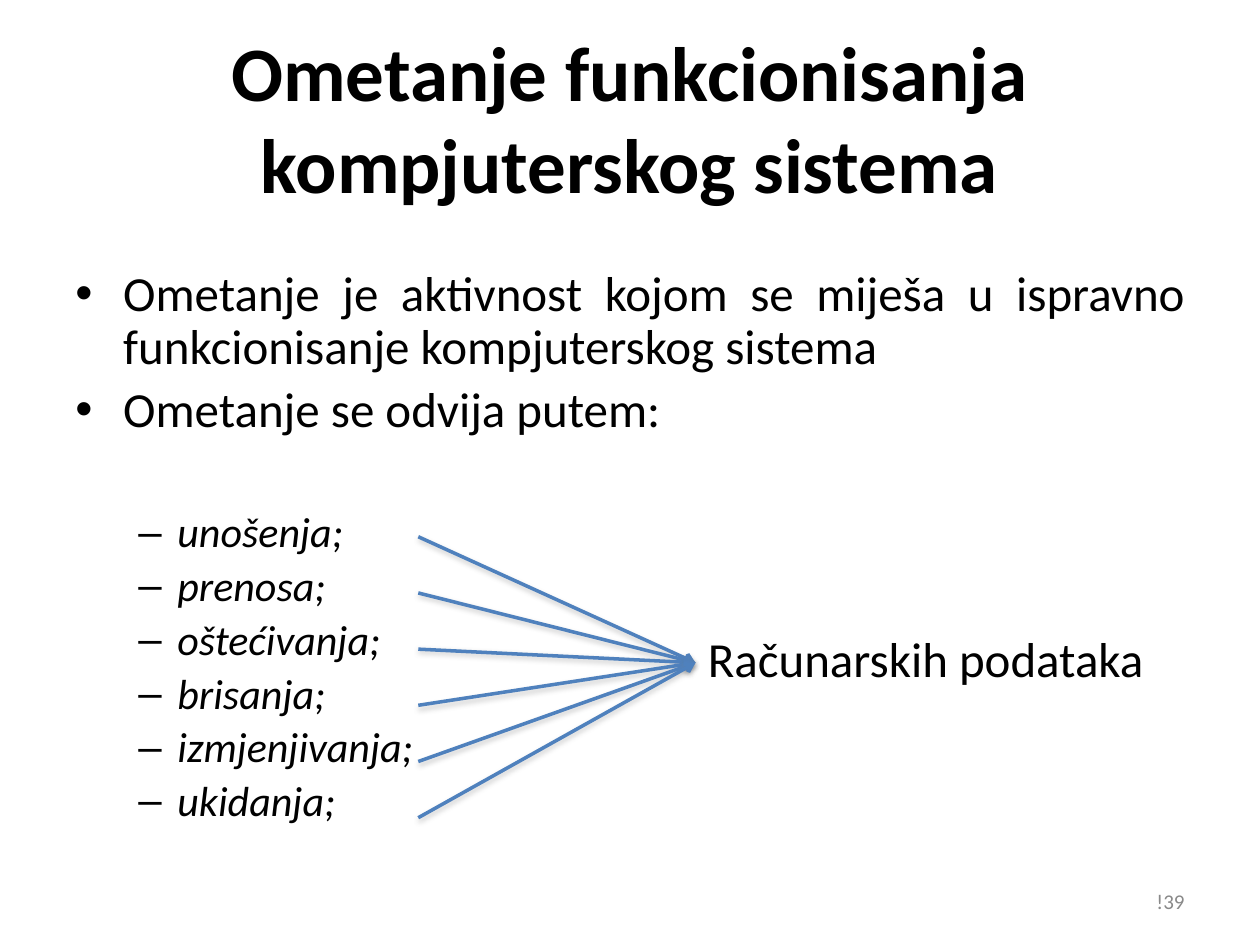
import pptx
import pptx.util
import pptx.dml.color
import pptx.enum.shapes
import pptx.enum.text
import pptx.oxml
import pptx.oxml.ns
from dataclasses import dataclass

Inches = pptx.util.Inches
Pt = pptx.util.Pt
ALIGN = pptx.enum.text.PP_ALIGN
ANCHOR = pptx.enum.text.MSO_ANCHOR


@dataclass(frozen=True)
class Theme:
    font: str = "Calibri"
    text: str = "000000"
    muted: str = "898989"
    accent: str = "4F81BD"
    shadow: str = "808080"
    title: int = 44
    body: int = 28
    item: int = 24
    number: int = 12


THEME = Theme()
POINTS = [
    "Ometanje je aktivnost kojom se miješa u ispravno funkcionisanje kompjuterskog sistema",
    "Ometanje se odvija putem:",
]
ACTIONS = ["unošenja;", "prenosa;", "oštećivanja;", "brisanja;", "izmjenjivanja;", "ukidanja;"]


def rgb(color):
    return pptx.dml.color.RGBColor.from_string(color)


def add_box(s, left, top, width, height, anchor=ANCHOR.TOP, wrap=True):
    box = s.shapes.add_textbox(Inches(left), Inches(top), Inches(width), Inches(height))
    tf = box.text_frame
    tf.word_wrap = wrap
    tf.vertical_anchor = anchor
    return tf


def write(p, text, size, align, color=THEME.text, bold=False, italic=False):
    p.text = text
    p.alignment = align
    for r in p.runs:
        r.font.name = THEME.font
        r.font.size = Pt(size)
        r.font.bold = bold
        r.font.italic = italic
        r.font.color.rgb = rgb(color)


def add_bullet(p, char, indent, hanging, before):
    p.line_spacing = 0.9
    p.space_before = Pt(before)
    pPr = p._p.get_or_add_pPr()
    pPr.set("marL", str(Inches(indent)))
    pPr.set("indent", str(-Inches(hanging)))
    ns = pptx.oxml.ns.nsdecls("a")
    pPr.append(pptx.oxml.parse_xml(f'<a:buFont {ns} typeface="Arial"/>'))
    pPr.append(pptx.oxml.parse_xml(f'<a:buChar {ns} char="{char}"/>'))


def add_body(s):
    tf = add_box(s, 0.5, 2.09, 9, 3.77)
    for i, text in enumerate(POINTS):
        p = tf.add_paragraph() if i else tf.paragraphs[0]
        write(p, text, THEME.body, ALIGN.JUSTIFY)
        add_bullet(p, "•", 0.38, 0.38, 5.6)
    for i, text in enumerate(ACTIONS):
        p = tf.add_paragraph()
        p.level = 1
        write(p, text, THEME.item, ALIGN.JUSTIFY, italic=True)
        add_bullet(p, "–", 0.81, 0.31, 4.8 if i else 42)


def add_arrow(s, x1, y1, x2, y2):
    line = s.shapes.add_connector(
        pptx.enum.shapes.MSO_CONNECTOR.STRAIGHT, Inches(x1), Inches(y1), Inches(x2), Inches(y2))
    line.line.color.rgb = rgb(THEME.accent)
    line.line.width = Pt(2)
    ns = pptx.oxml.ns.nsdecls("a")
    line.line._get_or_add_ln().append(pptx.oxml.parse_xml(f'<a:tailEnd {ns} type="arrow"/>'))
    line._element.spPr.append(pptx.oxml.parse_xml(
        f'<a:effectLst {ns}><a:outerShdw blurRad="{Pt(3.1)}" dist="{Pt(1.6)}" dir="5400000" '
        f'rotWithShape="0"><a:srgbClr val="{THEME.shadow}"><a:alpha val="38000"/></a:srgbClr>'
        '</a:outerShdw></a:effectLst>'))


def main():
    prs = pptx.Presentation()
    prs.slide_width, prs.slide_height = Inches(10), Inches(7.5)
    s = prs.slides.add_slide(prs.slide_layouts[6])

    tf = add_box(s, 0.5, 0.3, 9, 1.25, ANCHOR.MIDDLE)
    write(tf.paragraphs[0], "Ometanje funkcionisanja kompjuterskog sistema",
          THEME.title, ALIGN.CENTER, bold=True)
    add_body(s)
    tf = add_box(s, 7.17, 6.95, 2.33, 0.4, ANCHOR.MIDDLE)
    write(tf.paragraphs[0], "!39", THEME.number, ALIGN.RIGHT, THEME.muted)
    tf = add_box(s, 5.52, 4.99, 3.7, 0.53, wrap=False)
    write(tf.paragraphs[0], "Računarskih podataka", THEME.body, ALIGN.JUSTIFY)
    tf.paragraphs[0].line_spacing = 0.9

    for i in range(len(ACTIONS)):
        add_arrow(s, 3.32, 4.26 + i * 0.446, 5.52, 5.26)
    prs.save("out.pptx")


if __name__ == "__main__":
    main()
